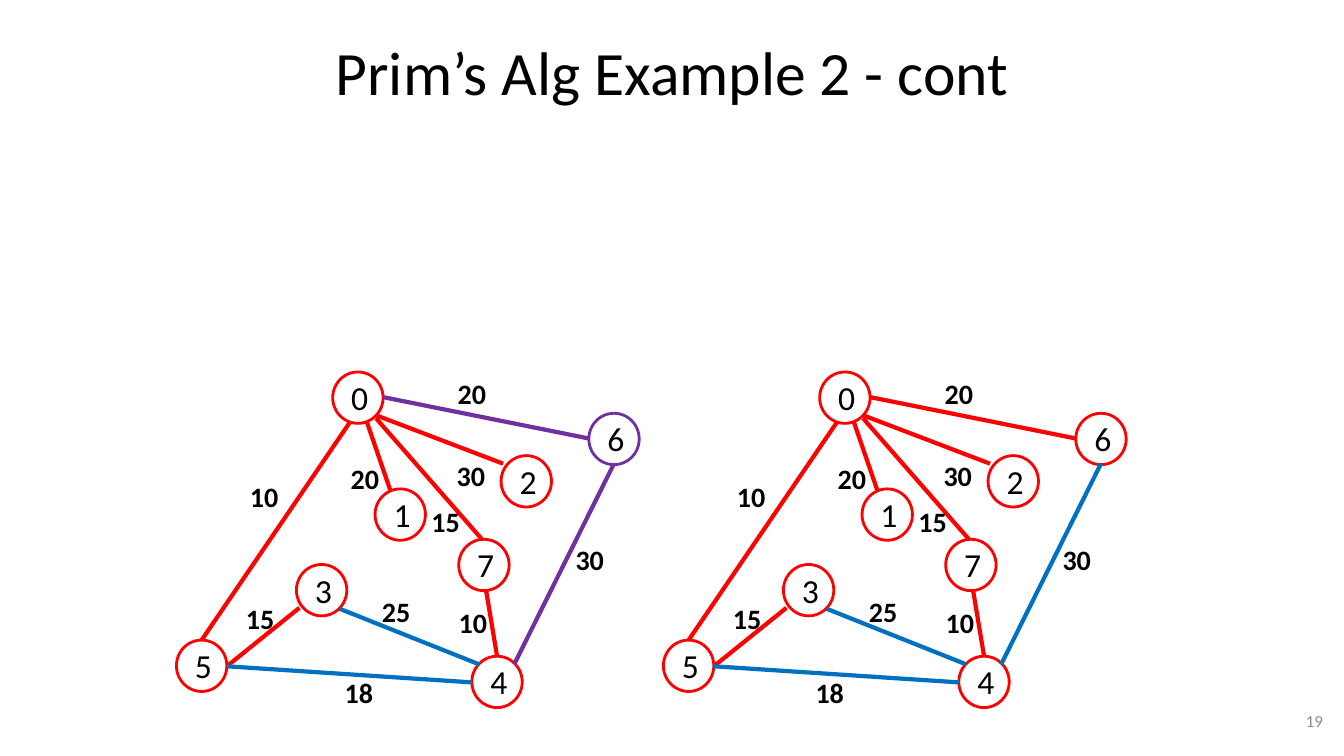
from typing import NamedTuple

from lxml import etree
from pptx import Presentation
from pptx import util as u
from pptx.dml.color import RGBColor
from pptx.enum import shapes, text
from pptx.oxml.ns import qn

PX = 9144  # EMU per px, 100 px to the inch
BLACK = RGBColor(0x00, 0x00, 0x00)
GREY = RGBColor(0x8C, 0x8C, 0x8C)
RED = RGBColor(0xFF, 0x00, 0x00)
BLUE = RGBColor(0x00, 0x70, 0xC0)
PURPLE = RGBColor(0x70, 0x30, 0xA0)
FONT = "Calibri"


class Node(NamedTuple):
    name: str
    left: int
    top: int
    color: RGBColor = RED


class Edge(NamedTuple):
    x1: int
    y1: int
    x2: int
    y2: int
    color: RGBColor = RED


class Weight(NamedTuple):
    value: str
    left: int
    top: int


class Step(NamedTuple):
    """One stage of the algorithm: its offset and what differs from the other stage."""
    left: int
    node_6: RGBColor
    edge_0_6: RGBColor
    edge_6_4: RGBColor
    weight_18_left: int


STEPS = [
    Step(0, PURPLE, PURPLE, PURPLE, 332),
    Step(483, RED, RED, BLUE, 316),
]


def px(length: int) -> u.Emu:
    return u.Emu(length * PX)


def format_text(frame, size: int, color: RGBColor, align, bold: bool = False) -> None:
    for para in frame.paragraphs:
        para.alignment = align
        for span in para.runs:
            span.font.name = FONT
            span.font.size = u.Pt(size)
            span.font.bold = bold
            span.font.color.rgb = color


def add_text(parent, words: str, left: int, top: int, width: int, height: int,
             size: int, align, color: RGBColor = BLACK, bold: bool = False,
             wrap: bool = True):
    box = parent.add_textbox(px(left), px(top), px(width), px(height))
    frame = box.text_frame
    frame.text = words
    frame.word_wrap = wrap
    frame.auto_size = text.MSO_AUTO_SIZE.SHAPE_TO_FIT_TEXT
    format_text(frame, size, color, align, bold)
    return box


def add_node(parent, node: Node, offset: int) -> None:
    left = node.left + offset
    circle = parent.add_shape(shapes.MSO_SHAPE.OVAL, px(left), px(node.top), px(50), px(51))
    circle.shadow.inherit = False
    circle.fill.background()
    circle.line.color.rgb = node.color
    circle.line.width = u.Pt(2)
    add_text(parent, f" {node.name}", left, node.top, 46, 50, 24, text.PP_ALIGN.CENTER)


def add_edge(parent, edge: Edge, offset: int) -> None:
    line = parent.add_connector(
        shapes.MSO_CONNECTOR.STRAIGHT,
        px(edge.x1 + offset), px(edge.y1), px(edge.x2 + offset), px(edge.y2))
    line.line.color.rgb = edge.color
    line.line.width = u.Pt(3)
    etree.SubElement(line._element.spPr, qn("a:effectLst"))


def add_graph(page, step: Step) -> None:
    nodes = [
        Node("0", 330, 369), Node("1", 372, 485), Node("7", 455, 535), Node("2", 497, 452),
        Node("5", 175, 635), Node("3", 294, 560), Node("4", 468, 651),
        Node("6", 584, 410, step.node_6),
    ]
    edges = [
        Edge(380, 394, 584, 435, step.edge_0_6),
        Edge(373, 412, 499, 460),
        Edge(364, 419, 387, 486),
        Edge(347, 419, 200, 635),
        Edge(373, 415, 478, 535),
        Edge(225, 661, 297, 603),
        Edge(225, 661, 468, 677, BLUE),
        Edge(337, 604, 475, 659, BLUE),
        Edge(482, 585, 493, 651),
        Edge(609, 460, 510, 659, step.edge_6_4),
    ]
    weights = [
        Weight("10", 238, 471), Weight("20", 444, 369), Weight("30", 443, 450),
        Weight("20", 338, 453), Weight("15", 418, 496), Weight("30", 561, 533),
        Weight("10", 445, 596), Weight("18", step.weight_18_left, 665),
        Weight("15", 234, 592), Weight("25", 369, 585),
    ]
    graph = page.shapes.add_group_shape()
    for node in nodes:
        add_node(graph.shapes, node, step.left)
    for edge in edges:
        add_edge(graph.shapes, edge, step.left)
    for weight in weights:
        add_text(page.shapes, weight.value, weight.left + step.left, weight.top, 49, 44,
                 20, text.PP_ALIGN.LEFT, bold=True, wrap=False)


def add_title(page) -> None:
    title = page.shapes.title
    title.left, title.top, title.width, title.height = px(67), px(8), px(1200), px(125)
    title.text_frame.text = "Prim’s Alg Example 2 - cont"
    title.text_frame.vertical_anchor = text.MSO_ANCHOR.MIDDLE
    format_text(title.text_frame, 44, BLACK, text.PP_ALIGN.CENTER)


def add_page_number(page) -> None:
    box = add_text(page.shapes, "19", 1011, 695, 311, 40, 12, text.PP_ALIGN.RIGHT, GREY)
    box.text_frame.auto_size = text.MSO_AUTO_SIZE.NONE
    box.text_frame.vertical_anchor = text.MSO_ANCHOR.MIDDLE


def main() -> None:
    deck = Presentation()
    deck.slide_width, deck.slide_height = px(1333), px(750)
    page = deck.slides.add_slide(deck.slide_layouts.get_by_name("Title Only"))
    add_title(page)
    add_page_number(page)
    for step in STEPS:
        add_graph(page, step)
    deck.save("out.pptx")


if __name__ == "__main__":
    main()
